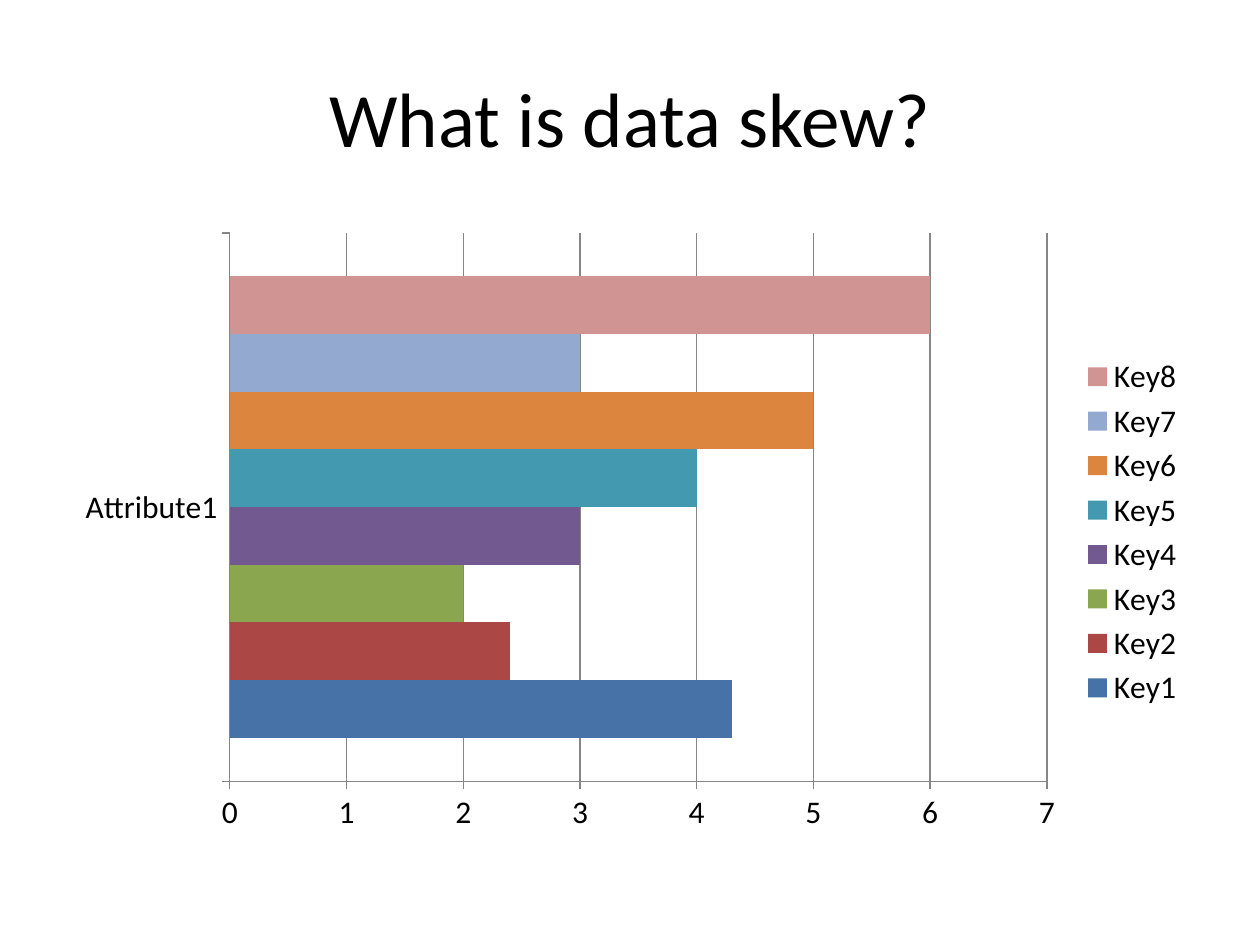
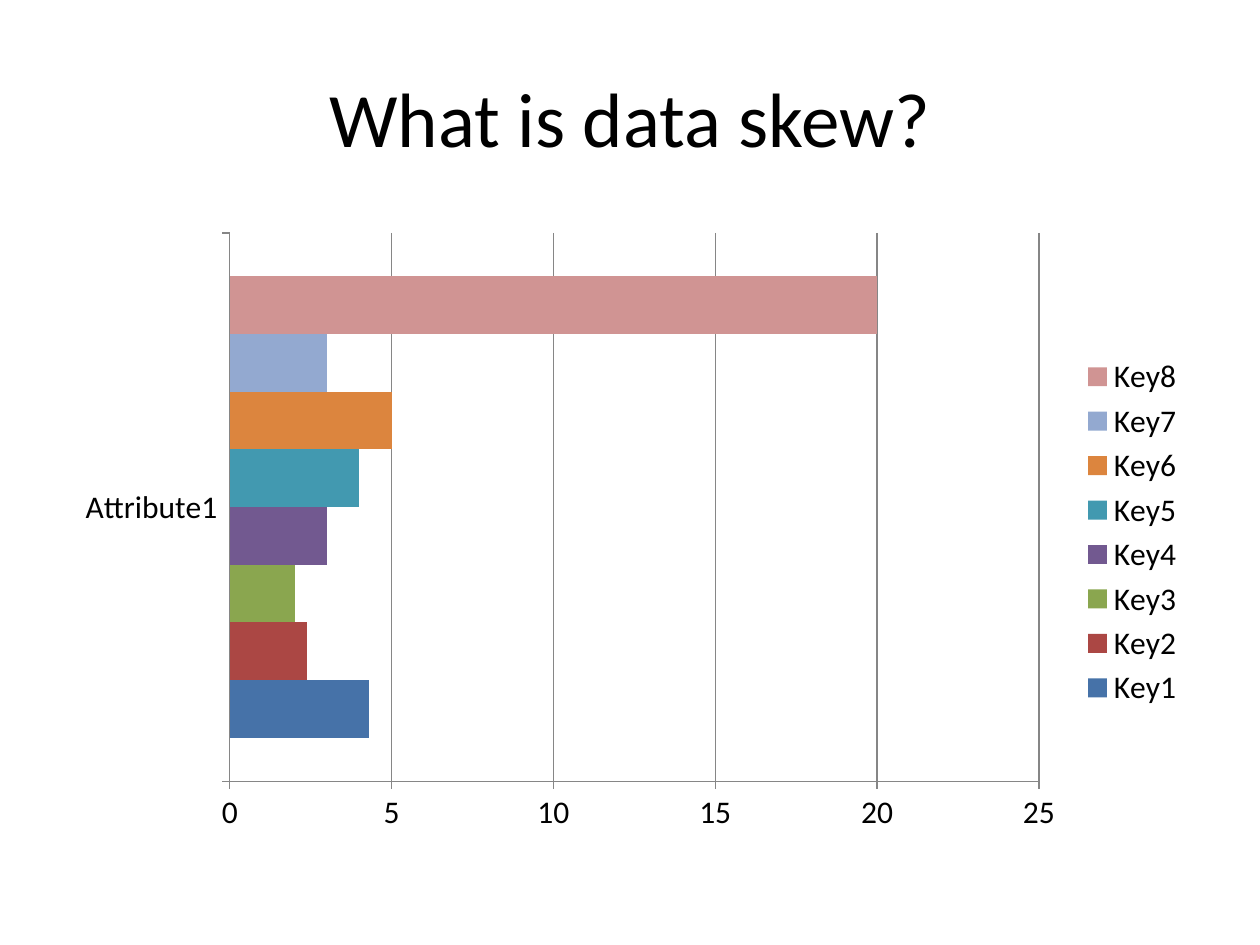
"""Build two slides that compare an even and a skewed key distribution."""
import pptx
import pptx.chart.data
import pptx.dml.color
import pptx.enum.chart
import pptx.enum.text
import pptx.util

Pt = pptx.util.Pt
RGBColor = pptx.dml.color.RGBColor

TITLE = "What is data skew?"
CATEGORY = "Attribute1"
SLIDE_VALUES = [
    {"values": (4.3, 2.4, 2, 3, 4, 5, 3, 6), "maximum": 7, "step": 1},
    {"values": (4.3, 2.4, 2, 3, 4, 5, 3, 20), "maximum": 25, "step": 5},
]

FONT = "Calibri"
BLACK = RGBColor(0x00, 0x00, 0x00)
WHITE = RGBColor(0xFF, 0xFF, 0xFF)
GRAY = RGBColor(0x86, 0x86, 0x86)
KEY_COLORS = [
    RGBColor(0x46, 0x72, 0xA8),
    RGBColor(0xAB, 0x47, 0x44),
    RGBColor(0x8A, 0xA6, 0x4F),
    RGBColor(0x72, 0x59, 0x90),
    RGBColor(0x42, 0x99, 0xB0),
    RGBColor(0xDC, 0x85, 0x3E),
    RGBColor(0x93, 0xA9, 0xD0),
    RGBColor(0xD0, 0x94, 0x93),
]

SLIDE_W, SLIDE_H = 720, 540
MARGIN = 36
CONTENT_W = SLIDE_W - 2 * MARGIN
TITLE_TOP, TITLE_H = 21.6, 90
CHART_TOP, CHART_H = 126, 356.4


def style_font(font, size):
    font.name = FONT
    font.size = Pt(size)
    font.color.rgb = BLACK


def style_line(line):
    line.color.rgb = GRAY
    line.width = Pt(0.75)


def add_title(s):
    sp = s.shapes.add_textbox(Pt(MARGIN), Pt(TITLE_TOP), Pt(CONTENT_W), Pt(TITLE_H))
    tf = sp.text_frame
    tf.word_wrap = True
    tf.vertical_anchor = pptx.enum.text.MSO_ANCHOR.MIDDLE
    p = tf.paragraphs[0]
    p.alignment = pptx.enum.text.PP_ALIGN.CENTER
    r = p.add_run()
    r.text = TITLE
    style_font(r.font, 44)


def add_key_chart(s, values, maximum, step):
    data = pptx.chart.data.CategoryChartData()
    data.categories = [CATEGORY]
    for number, value in enumerate(values, 1):
        data.add_series(f"Key{number}", [value])
    chart = s.shapes.add_chart(
        pptx.enum.chart.XL_CHART_TYPE.BAR_CLUSTERED,
        Pt(MARGIN), Pt(CHART_TOP), Pt(CONTENT_W), Pt(CHART_H), data,
    ).chart
    style_font(chart.font, 18)
    chart.has_title = False
    chart.has_legend = True
    chart.legend.position = pptx.enum.chart.XL_LEGEND_POSITION.RIGHT
    chart.legend.include_in_layout = False

    plot = chart.plots[0]
    plot.gap_width = 150
    plot.vary_by_categories = False
    for series, color in zip(plot.series, KEY_COLORS):
        series.format.fill.solid()
        series.format.fill.fore_color.rgb = color

    for axis in (chart.category_axis, chart.value_axis):
        axis.major_tick_mark = pptx.enum.chart.XL_TICK_MARK.OUTSIDE
        axis.minor_tick_mark = pptx.enum.chart.XL_TICK_MARK.NONE
        style_line(axis.format.line)
    axis = chart.value_axis
    axis.minimum_scale = 0
    axis.maximum_scale = maximum
    axis.major_unit = step
    axis.has_major_gridlines = True
    style_line(axis.major_gridlines.format.line)


def main():
    prs = pptx.Presentation()
    prs.slide_width, prs.slide_height = Pt(SLIDE_W), Pt(SLIDE_H)
    for chart_values in SLIDE_VALUES:
        s = prs.slides.add_slide(prs.slide_layouts[6])
        s.background.fill.solid()
        s.background.fill.fore_color.rgb = WHITE
        add_title(s)
        add_key_chart(s, **chart_values)
    prs.save("out.pptx")


if __name__ == "__main__":
    main()
